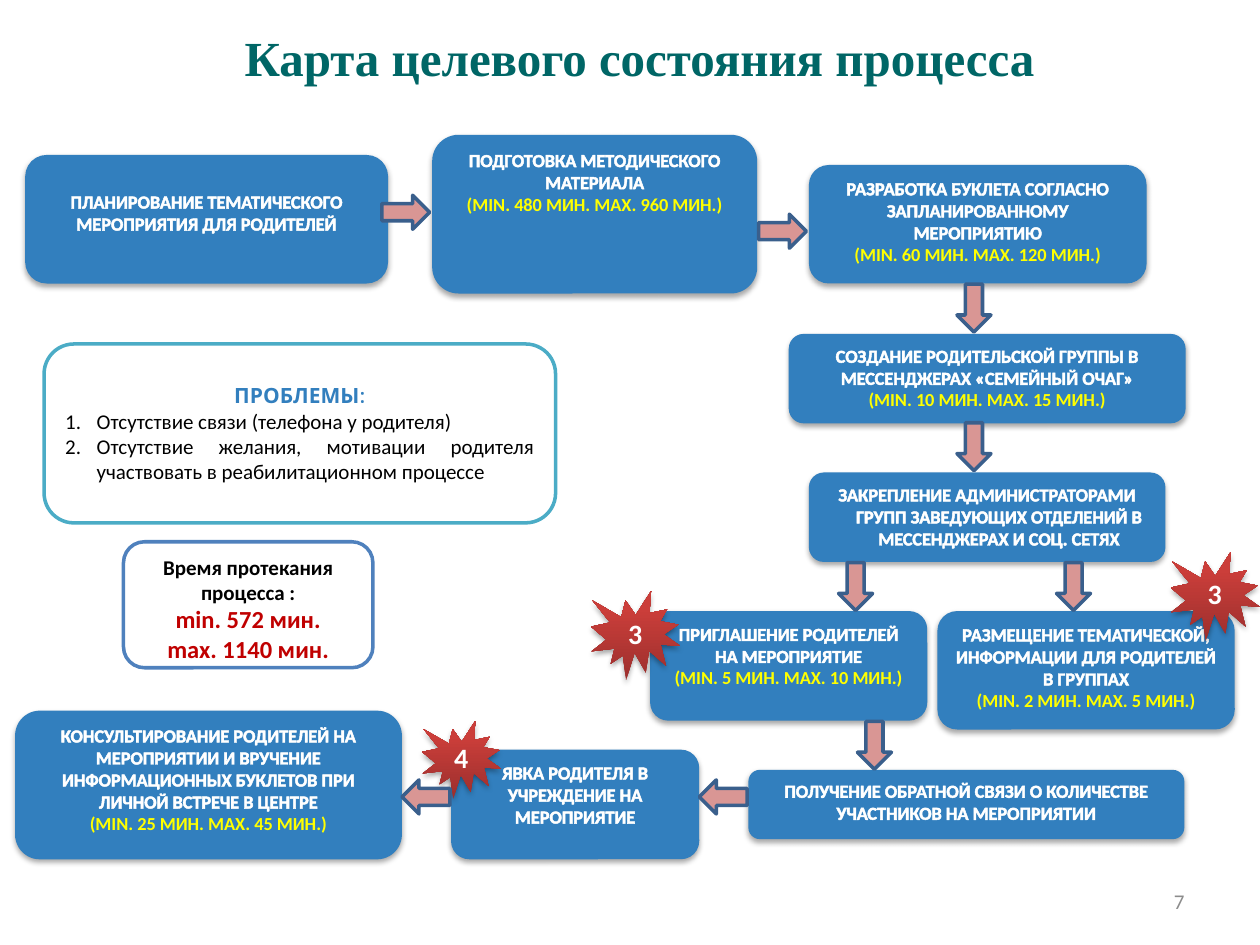
import lxml.etree
import pptx
import pptx.dml.color
import pptx.enum.shapes
import pptx.enum.text
import pptx.oxml
import pptx.oxml.ns
import pptx.util

SCALE = 9144
COLOURS = {
    "title": "006666", "block": "327FBE", "white": "FFFFFF", "duration": "FFFF00",
    "arrow": "D99694", "arrow line": "3A5F8C", "seal low": "9C2F2D", "seal high": "CB3E3A",
    "time line": "4F81BD", "problem line": "4BACC6", "black": "000000",
    "total": "C00000", "number": "8C8C8C",
}
SHAPE = pptx.enum.shapes.MSO_SHAPE
ALIGN = pptx.enum.text.PP_ALIGN
ANCHOR = pptx.enum.text.MSO_ANCHOR
NAMESPACE = pptx.oxml.ns.nsdecls("a")
SHADOW = (
    f'<a:outerShdw {NAMESPACE} blurRad="40000" dist="23000" dir="5400000" rotWithShape="0">'
    '<a:srgbClr val="000000"><a:alpha val="35000"/></a:srgbClr></a:outerShdw>'
)
OUTLINE = (
    f'<a:ln {NAMESPACE} w="9000"><a:solidFill>'
    '<a:srgbClr val="FFFFFF"/></a:solidFill></a:ln>'
)

BLOCKS = [
    ((20, 123, 288, 102), "ПЛАНИРОВАНИЕ ТЕМАТИЧЕСКОГО МЕРОПРИЯТИЯ ДЛЯ РОДИТЕЛЕЙ", "", 23, 0),
    ((343, 107, 258, 126), "ПОДГОТОВКА МЕТОДИЧЕСКОГО МАТЕРИАЛА",
     "(MIN. 480 МИН. MAX. 960 МИН.)", 5, 0),
    ((642, 131, 268, 94), "РАЗРАБОТКА БУКЛЕТА СОГЛАСНО ЗАПЛАНИРОВАННОМУ МЕРОПРИЯТИЮ",
     "(MIN. 60 МИН. MAX. 120 МИН.)", 5, 0),
    ((626, 265, 315, 71), "СОЗДАНИЕ РОДИТЕЛЬСКОЙ ГРУППЫ В МЕССЕНДЖЕРАХ «СЕМЕЙНЫЙ ОЧАГ»",
     "(MIN. 10 МИН. MAX. 15 МИН.)", 5, 0),
    ((642, 375, 283, 71),
     "ЗАКРЕПЛЕНИЕ АДМИНИСТРАТОРАМИ ГРУПП ЗАВЕДУЮЩИХ ОТДЕЛЕНИЙ В МЕССЕНДЖЕРАХ И СОЦ. СЕТЯХ",
     "", 5, 19),
    ((516, 485, 220, 87), "ПРИГЛАШЕНИЕ РОДИТЕЛЕЙ НА МЕРОПРИЯТИЕ",
     "(MIN. 5 МИН. MAX. 10 МИН.)", 5, 0),
    ((744, 485, 236, 94), "РАЗМЕЩЕНИЕ ТЕМАТИЧЕСКОЙ, ИНФОРМАЦИИ ДЛЯ РОДИТЕЛЕЙ В ГРУППАХ",
     "(MIN. 2 МИН. MAX. 5 МИН.)", 5, 0),
    ((594, 611, 346, 55), "ПОЛУЧЕНИЕ ОБРАТНОЙ СВЯЗИ О КОЛИЧЕСТВЕ УЧАСТНИКОВ НА МЕРОПРИЯТИИ", "", 5, 0),
    ((358, 595, 197, 87), "ЯВКА РОДИТЕЛЯ В УЧРЕЖДЕНИЕ НА МЕРОПРИЯТИЕ", "", 5, 0),
    ((12, 564, 307, 118),
     "КОНСУЛЬТИРОВАНИЕ РОДИТЕЛЕЙ НА МЕРОПРИЯТИИ И ВРУЧЕНИЕ ИНФОРМАЦИОННЫХ БУКЛЕТОВ "
     "ПРИ ЛИЧНОЙ ВСТРЕЧЕ В ЦЕНТРЕ", "(MIN. 25 МИН. MAX. 45 МИН.)", 5, 0),
]
SEALS = [((929, 438, 71, 71), "3"), ((469, 469, 71, 71), "3"), ((335, 572, 63, 62), "4")]
ARROWS = [
    (303, 155, 0), (602, 170, 0), (754, 231, 90), (754, 341, 90), (660, 452, 90),
    (833, 452, 90), (675, 578, 90), (555, 619, 180), (319, 619, 180),
]


def emu(*lengths):
    """Turn px lengths into EMU."""
    return [pptx.util.Emu(length * SCALE) for length in lengths]


def colour(name):
    """Return the named colour."""
    return pptx.dml.color.RGBColor.from_string(COLOURS[name])


def add_shape(page, kind, box, fill=None, line=None):
    """Add a preset shape with an optional solid fill and line."""
    shape = page.shapes.add_shape(kind, *emu(*box))
    shape.shadow.inherit = False
    if fill:
        shape.fill.solid()
        shape.fill.fore_color.rgb = colour(fill)
    if line:
        shape.line.color.rgb = colour(line)
        shape.line.width = pptx.util.Pt(2)
    else:
        shape.line.fill.background()
    return shape


def add_shadow(shape):
    """Give a shape a soft shadow below it."""
    effects = shape._element.spPr.find(pptx.oxml.ns.qn("a:effectLst"))
    effects.append(pptx.oxml.parse_xml(SHADOW))


def write(frame, lines, anchor=ANCHOR.TOP, align=ALIGN.CENTER):
    """Write one paragraph per (text, size, colour, bold, font) line and return them."""
    frame.word_wrap = True
    frame.vertical_anchor = anchor
    paras = []
    for index, (text, size, shade, bold, font) in enumerate(lines):
        para = frame.add_paragraph() if index else frame.paragraphs[0]
        para.alignment = align
        span = para.add_run()
        span.text = text
        span.font.size = pptx.util.Pt(size)
        span.font.bold = bold
        span.font.name = font
        span.font.color.rgb = colour(shade)
        paras.append(para)
    return paras


def set_hanging(para, indent):
    """Indent all lines of a paragraph but the first."""
    properties = para._p.get_or_add_pPr()
    properties.set("marL", str(indent * SCALE))
    properties.set("indent", str(-indent * SCALE))
    return properties


def add_title(page, box):
    """Place the page title."""
    title = page.shapes.title
    title.left, title.top, title.width, title.height = emu(*box)
    write(title.text_frame,
          [("Карта целевого состояния процесса", 28, "title", True, "Times New Roman")])
    title.text_frame.auto_size = pptx.enum.text.MSO_AUTO_SIZE.SHAPE_TO_FIT_TEXT


def add_block(page, box, action, duration, inset, hanging):
    """Add one process step with its duration."""
    shape = add_shape(page, SHAPE.ROUNDED_RECTANGLE, box, "block")
    add_shadow(shape)
    shape.text_frame.margin_top = emu(inset)[0]
    lines = [(action, 10.5, "white", True, "Calibri")]
    if duration:
        lines.append((duration, 10.5, "duration", True, "Calibri"))
    first = write(shape.text_frame, lines)[0]
    first.runs[0]._r.get_or_add_rPr().insert(0, pptx.oxml.parse_xml(OUTLINE))
    if hanging:
        set_hanging(first, hanging)


def add_arrow(page, left, top, angle):
    """Add an arrow between two steps."""
    shape = add_shape(page, SHAPE.RIGHT_ARROW, (left, top, 38, 27), "arrow", "arrow line")
    shape.rotation = angle


def add_seal(page, box, number):
    """Add a numbered burst."""
    shape = add_shape(page, SHAPE.EXPLOSION1, box)
    shape.fill.gradient()
    shape.fill.gradient_angle = 90
    for stop, position, name in zip(shape.fill.gradient_stops, (0, 0.8), ("seal low", "seal high")):
        stop.position = position
        stop.color.rgb = colour(name)
    add_shadow(shape)
    write(shape.text_frame, [(number, 16, "white", True, "Calibri")], ANCHOR.MIDDLE)


def add_problems(page, box):
    """Add the numbered list of problems."""
    shape = add_shape(page, SHAPE.ROUNDED_RECTANGLE, box, "white", "problem line")
    heading, *items = write(shape.text_frame, [
        ("ПРОБЛЕМЫ:", 12, "block", True, "Quicksand"),
        ("Отсутствие связи (телефона у родителя)", 12, "black", False, "Calibri"),
        ("Отсутствие желания, мотивации родителя участвовать в реабилитационном процессе",
         12, "black", False, "Calibri"),
    ], ANCHOR.MIDDLE, ALIGN.JUSTIFY)
    heading.alignment = ALIGN.CENTER
    for para in items:
        lxml.etree.SubElement(set_hanging(para, 25), pptx.oxml.ns.qn("a:buAutoNum"),
                              type="arabicPeriod")


def add_total_time(page, box):
    """Add the total duration of the process."""
    shape = add_shape(page, SHAPE.ROUNDED_RECTANGLE, box, "white", "time line")
    write(shape.text_frame, [
        ("Время протекания процесса :", 12, "black", True, "Calibri"),
        ("min. 572 мин.", 14, "total", True, "Calibri"),
        ("max. 1140 мин.", 14, "total", True, "Calibri"),
    ])


def add_page_number(page, box):
    """Add the page number."""
    frame = page.shapes.add_textbox(*emu(*box)).text_frame
    write(frame, [("7", 12, "number", False, "Calibri")], ANCHOR.MIDDLE, ALIGN.RIGHT)


def main():
    """Build and save the deck."""
    deck = pptx.Presentation()
    deck.slide_width, deck.slide_height = emu(1000, 750)
    page = deck.slides.add_slide(deck.slide_layouts[5])
    add_title(page, (161, 17, 693, 57))
    for block in BLOCKS:
        add_block(page, *block)
    add_problems(page, (35, 273, 406, 142))
    add_total_time(page, (98, 430, 198, 100))
    for seal in SEALS:
        add_seal(page, *seal)
    for arrow in ARROWS:
        add_arrow(page, *arrow)
    add_page_number(page, (717, 695, 233, 40))
    deck.save("out.pptx")


if __name__ == "__main__":
    main()
